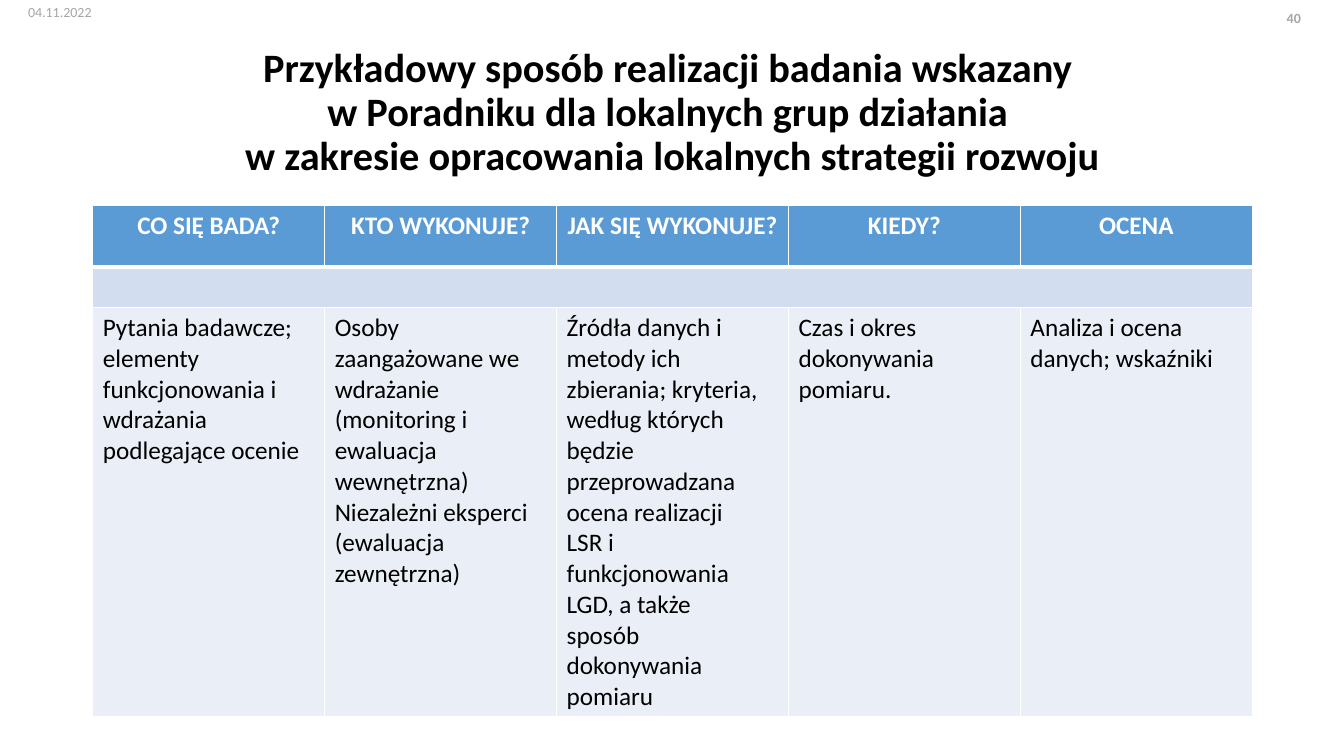
import copy

import pptx
import pptx.dml.color
import pptx.enum.text
import pptx.oxml
import pptx.oxml.ns
import pptx.util

Inches = pptx.util.Inches
RGBColor = pptx.dml.color.RGBColor
ALIGN = pptx.enum.text.PP_ALIGN
ANCHOR = pptx.enum.text.MSO_ANCHOR

BLACK = RGBColor(0x00, 0x00, 0x00)
WHITE = RGBColor(0xFF, 0xFF, 0xFF)
GREY = RGBColor(0xA6, 0xA6, 0xA6)
HEADER_BLUE = RGBColor(0x5B, 0x9B, 0xD5)
BAND_BLUE = RGBColor(0xD2, 0xDE, 0xEF)
PALE_BLUE = RGBColor(0xEA, 0xEF, 0xF7)

SMALL = {"size": 10, "color": GREY, "bold": False}
NUMBER = {"size": 10, "color": GREY, "bold": True}
TITLE = {"size": 28.8, "color": BLACK, "bold": True}
HEADER = {"size": 18, "color": WHITE, "bold": True}
BODY = {"size": 18, "color": BLACK, "bold": False}

TITLE_LINES = [
    "Przykładowy sposób realizacji badania wskazany ",
    "w Poradniku dla lokalnych grup działania ",
    "w zakresie opracowania lokalnych strategii rozwoju",
]
# Each column: heading and the paragraphs below it
COLUMNS = [
    ("CO SIĘ BADA?",
     ["Pytania badawcze; elementy funkcjonowania i wdrażania podlegające ocenie"]),
    ("KTO WYKONUJE?",
     ["Osoby zaangażowane we wdrażanie (monitoring i ewaluacja wewnętrzna)",
      "Niezależni eksperci (ewaluacja zewnętrzna)"]),
    ("JAK SIĘ WYKONUJE?",
     ["Źródła danych i", "metody ich", "zbierania; kryteria,", "według których",
      "będzie", "przeprowadzana", "ocena realizacji", "LSR i", "funkcjonowania",
      "LGD, a także", "sposób", "dokonywania", "pomiaru"]),
    ("KIEDY?", ["Czas i okres", "dokonywania", "pomiaru."]),
    ("OCENA", ["Analiza i ocena", "danych; wskaźniki"]),
]
ROW_HEIGHTS = [0.61, 0.4, 4.06]


def write_text(text_frame, text, style, alignment):
    """Fill a text frame; newlines separate paragraphs."""
    text_frame.text = text
    for paragraph in text_frame.paragraphs:
        paragraph.alignment = alignment
        for run in paragraph.runs:
            run.font.color.rgb = style["color"]
            formats = {"name": "Calibri", "size": pptx.util.Pt(style["size"]),
                       "bold": style["bold"]}
            for name, value in formats.items():
                setattr(run.font, name, value)


def add_label(slide, box, text, style, alignment):
    shape = slide.shapes.add_textbox(*map(Inches, box))
    shape.text_frame.word_wrap = True
    write_text(shape.text_frame, text, style, alignment)


def add_title(slide, box):
    title = slide.shapes.title
    for name, value in zip(("left", "top", "width", "height"), box):
        setattr(title, name, Inches(value))
    frame = title.text_frame
    frame.auto_size = pptx.enum.text.MSO_AUTO_SIZE.NONE
    frame.vertical_anchor = ANCHOR.MIDDLE
    write_text(frame, "\v".join(TITLE_LINES), TITLE, ALIGN.CENTER)
    paragraph = frame.paragraphs[0]
    paragraph.line_spacing = 0.9
    # Line breaks take the size of the text around them
    run_format = paragraph.runs[0].font._rPr
    for line_break in paragraph._p.findall(pptx.oxml.ns.qn("a:br")):
        line_break.insert(0, copy.deepcopy(run_format))


def set_borders(cell, top, bottom):
    """Draw white borders, with top and bottom widths in points."""
    properties = cell._tc.get_or_add_tcPr()
    widths = {"lnL": 1, "lnR": 1, "lnT": top, "lnB": bottom}
    for position, (tag, width) in enumerate(widths.items()):
        properties.insert(position, pptx.oxml.parse_xml(
            f'<a:{tag} {pptx.oxml.ns.nsdecls("a")} w="{pptx.util.Pt(width)}">'
            f'<a:solidFill><a:srgbClr val="{WHITE}"/></a:solidFill></a:{tag}>'))


def add_research_table(slide, box):
    left, top, width = map(Inches, box)
    height = Inches(sum(ROW_HEIGHTS))
    table = slide.shapes.add_table(
        len(ROW_HEIGHTS), len(COLUMNS), left, top, width, height).table
    for row, row_height in zip(table.rows, ROW_HEIGHTS):
        row.height = Inches(row_height)

    # Fills and borders, with a thick line under the headings
    row_formats = [(HEADER_BLUE, 1, 3), (BAND_BLUE, 3, 1), (PALE_BLUE, 1, 1)]
    for row, (color, top_line, bottom_line) in zip(table.rows, row_formats):
        for cell in row.cells:
            cell.fill.solid()
            cell.fill.fore_color.rgb = color
            set_borders(cell, top_line, bottom_line)

    # Headings, empty band and descriptions
    table.cell(1, 0).merge(table.cell(1, len(COLUMNS) - 1))
    for index, (heading, lines) in enumerate(COLUMNS):
        write_text(table.cell(0, index).text_frame, heading, HEADER, ALIGN.CENTER)
        write_text(table.cell(2, index).text_frame, "\n".join(lines), BODY, ALIGN.LEFT)


def main():
    presentation = pptx.Presentation()
    presentation.slide_width = Inches(13.33)
    presentation.slide_height = Inches(7.5)
    slide = presentation.slides.add_slide(presentation.slide_layouts[5])
    add_label(slide, (0.18, -0.01, 3, 0.4), "04.11.2022", SMALL, ALIGN.LEFT)
    add_label(slide, (10, 0.05, 3, 0.4), "40", NUMBER, ALIGN.RIGHT)
    add_title(slide, (0.92, 0.4, 11.5, 1.45))
    add_research_table(slide, (0.92, 2.04, 11.5))
    presentation.save("out.pptx")


if __name__ == "__main__":
    main()
